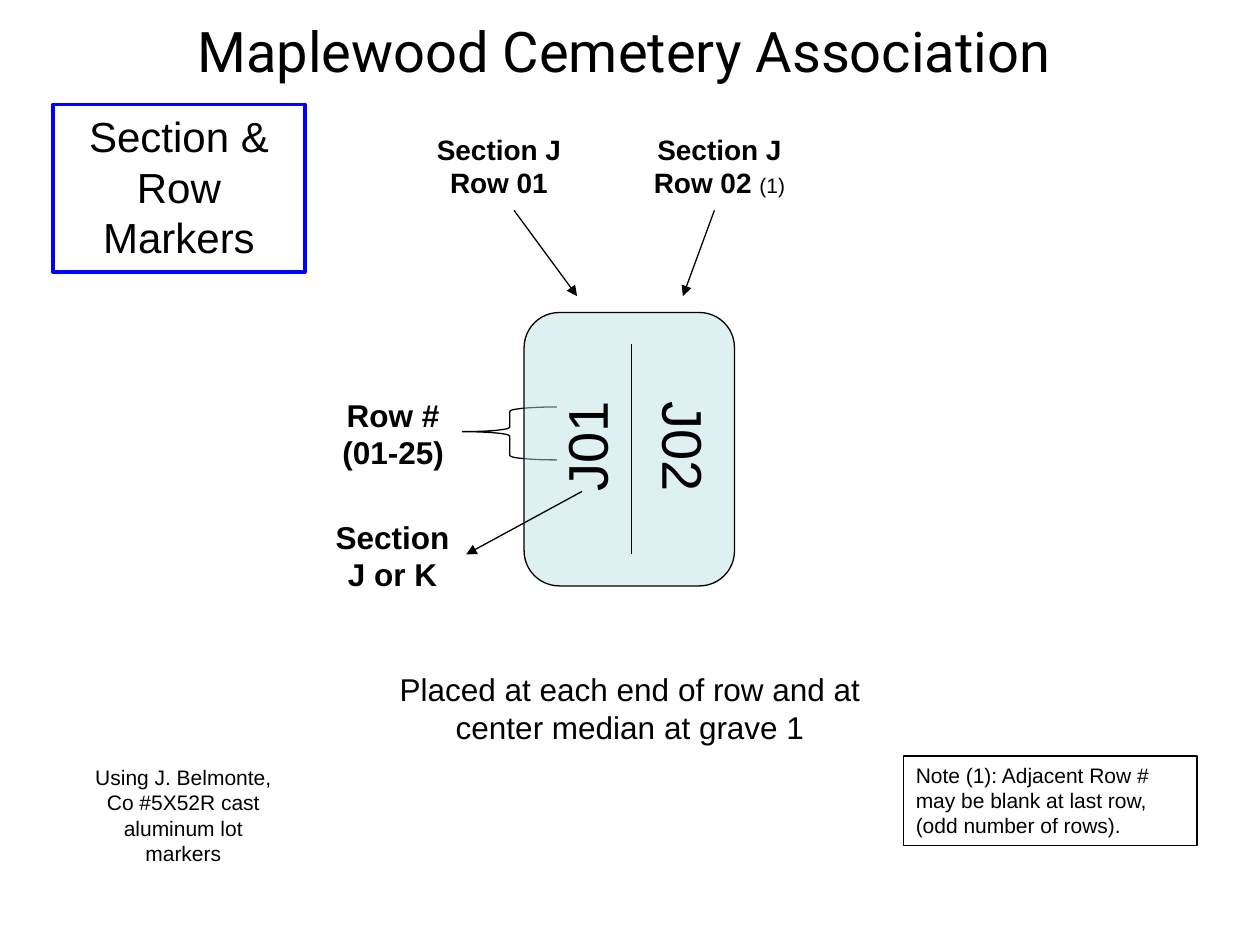
import pptx
import pptx.dml.color
import pptx.enum.shapes
import pptx.enum.text
import pptx.oxml.ns
import pptx.util
from lxml import etree
from pptx.util import Inches

BLACK = pptx.dml.color.RGBColor(0x00, 0x00, 0x00)
BLUE = pptx.dml.color.RGBColor(0x00, 0x00, 0xFF)
PALE_TEAL = pptx.dml.color.RGBColor(0xBB, 0xE0, 0xE3)
SHAPES = pptx.enum.shapes.MSO_SHAPE
ALIGN = pptx.enum.text.PP_ALIGN


def add_element(parent, tag, **attributes):
    return etree.SubElement(parent, pptx.oxml.ns.qn(tag), attributes)


class MarkerSlide:
    font_name = "Arial"
    line_width = 0.75

    def __init__(self, presentation):
        self.slide = presentation.slides.add_slide(presentation.slide_layouts[6])

    def label(self, shape, text, size, bold=False, align=ALIGN.CENTER, font_name=None):
        frame = shape.text_frame
        frame.word_wrap = True
        frame.vertical_anchor = pptx.enum.text.MSO_ANCHOR.TOP
        paragraph = frame.paragraphs[0]
        paragraph.alignment = align
        paragraph.add_run().text = text
        font = paragraph.font
        font.name = font_name or self.font_name
        font.size = pptx.util.Pt(size)
        font.bold = bold
        font.color.rgb = BLACK
        return paragraph

    def text(self, left, top, width, height, text, size, rotation=0, **style):
        box = self.slide.shapes.add_textbox(
            Inches(left), Inches(top), Inches(width), Inches(height))
        box.rotation = rotation
        return self.label(box, text, size, **style)

    def shape(self, kind, left, top, width, height, color=BLACK, line_width=None,
              adjustments=()):
        shape = self.slide.shapes.add_shape(
            kind, Inches(left), Inches(top), Inches(width), Inches(height))
        shape.shadow.inherit = False
        shape.fill.background()
        shape.line.color.rgb = color
        shape.line.width = pptx.util.Pt(line_width or self.line_width)
        for index, value in enumerate(adjustments):
            shape.adjustments[index] = value
        return shape

    def plate(self, left, top, width, height, color, opacity):
        plate = self.shape(SHAPES.ROUNDED_RECTANGLE, left, top, width, height,
                           adjustments=[0.167])
        plate.rotation = 270
        plate.fill.solid()
        plate.fill.fore_color.rgb = color
        solid_fill = plate._element.spPr.find(pptx.oxml.ns.qn("a:solidFill"))
        add_element(solid_fill[0], "a:alpha", val=str(opacity * 1000))

    def line(self, start, end, arrow=False):
        connector = self.slide.shapes.add_connector(
            pptx.enum.shapes.MSO_CONNECTOR.STRAIGHT,
            *(Inches(value) for value in (*start, *end)))
        connector.line.color.rgb = BLACK
        connector.line.width = pptx.util.Pt(self.line_width)
        properties = connector._element.spPr
        if arrow:
            outline = properties.find(pptx.oxml.ns.qn("a:ln"))
            add_element(outline, "a:tailEnd", type="triangle")
        add_element(properties, "a:effectLst")


def main():
    presentation = pptx.Presentation()
    presentation.slide_width = Inches(10)
    presentation.slide_height = Inches(7.5)
    marker = MarkerSlide(presentation)

    marker.shape(SHAPES.LEFT_BRACE, 3.67, 3.23, 0.75, 0.42, adjustments=[0.083, 0.467])
    marker.text(2.49, 4.06, 1.25, 0.7, "Section J or K", 18, bold=True)
    marker.text(2.58, 3.09, 1.08, 0.7, "Row # (01-25)", 18, bold=True)

    heading = marker.shape(SHAPES.RECTANGLE, 0.42, 0.83, 2, 1.33, BLUE, 2)
    marker.label(heading, "Section & Row Markers", 24)
    marker.text(1.08, 0.08, 7.75, 0.63, "Maplewood Cemetery Association", 32,
                font_name="Roboto")
    marker.text(2.75, 5.27, 4.5, 0.7,
                "Placed at each end of row and at center median at grave 1", 18)

    marker.plate(3.91, 2.73, 2.17, 1.67, PALE_TEAL, 48)
    for left, code, rotation in ((4.14, "J01", 270), (4.93, "J02", 90)):
        marker.text(left, 3.23, 1.01, 0.63, code, 32, rotation=rotation)
    marker.line((5.01, 4.4), (5.01, 2.73))
    marker.line((4.62, 3.9), (3.7, 4.4), arrow=True)

    marker.text(0.58, 6.02, 1.75, 0.9,
                "Using J. Belmonte, Co #5X52R cast aluminum lot markers", 12)

    marker.line((4.08, 1.67), (4.58, 2.35), arrow=True)
    marker.line((5.67, 1.67), (5.42, 2.35), arrow=True)
    marker.text(3.25, 1, 1.42, 0.64, "Section J Row 01", 16, bold=True)
    second_row = marker.text(5, 1, 1.42, 0.64, "Section J Row 02 ", 16, bold=True)
    reference = second_row.add_run()
    reference.text = "(1)"
    reference.font.size = pptx.util.Pt(12)
    reference.font.bold = False

    note = marker.shape(SHAPES.RECTANGLE, 7.17, 6, 2.33, 0.71)
    marker.label(note, "Note (1): Adjacent Row # may be blank at last row, "
                 "(odd number of rows).", 12, align=ALIGN.LEFT)

    presentation.save("out.pptx")


if __name__ == "__main__":
    main()
